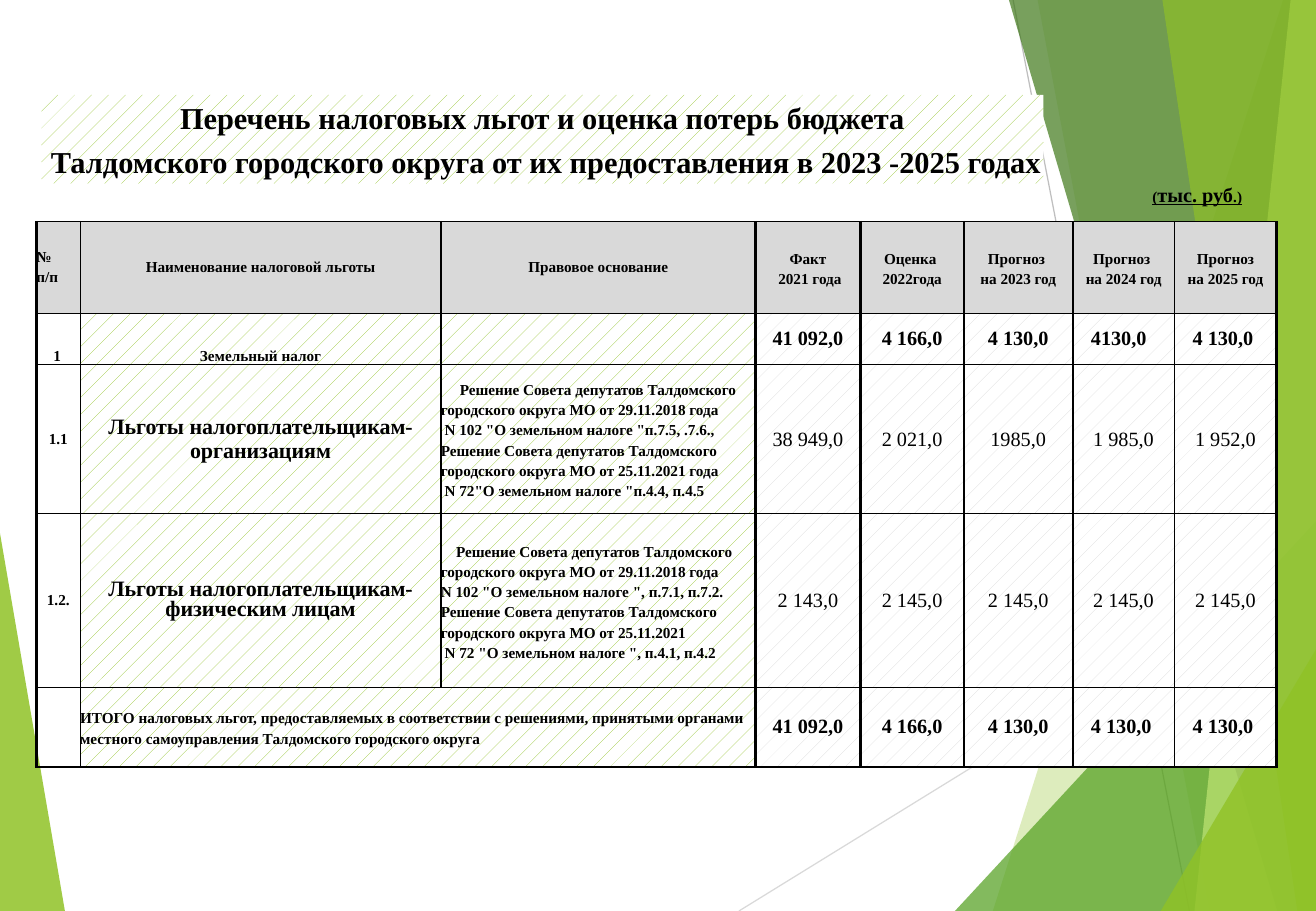
from dataclasses import dataclass

from lxml import etree
from pptx import Presentation
from pptx.dml.color import RGBColor
from pptx.enum.dml import MSO_PATTERN
from pptx.enum.shapes import MSO_CONNECTOR
from pptx.enum.text import MSO_ANCHOR, MSO_AUTO_SIZE, PP_ALIGN
from pptx.oxml.ns import qn
from pptx.util import Pt

LEFT, CENTER = PP_ALIGN.LEFT, PP_ALIGN.CENTER
MIDDLE, BOTTOM = MSO_ANCHOR.MIDDLE, MSO_ANCHOR.BOTTOM
NO_FIT = MSO_AUTO_SIZE.NONE
STRAIGHT = MSO_CONNECTOR.STRAIGHT
DOTTED = MSO_PATTERN.PERCENT_5


@dataclass(frozen=True)
class Theme:
    font: str = "Times New Roman"
    ink: str = "000000"
    paper: str = "FFFFFF"
    green: str = "90C226"
    leaf: str = "54A021"
    forest: str = "3F7819"
    lime: str = "C0E474"
    grey: str = "D9D9D9"
    mid_grey: str = "BFBFBF"
    title: float = 18
    name: float = 13
    number: float = 12
    small: float = 9
    thin: float = 0.75
    thick: float = 1.5


T = Theme()
W, H = 780, 540

TITLE = ["Перечень налоговых льгот и оценка потерь бюджета",
         " Талдомского городского округа от их предоставления в 2023 -2025 годах"]
UNIT = [("(", T.small), ("тыс. руб", T.number), (".)", T.small)]

RAYS = [((438, H), (W, 329), T.grey), ((600.5, 0), (705, H), T.mid_grey)]
FACETS = [
    ([(0, 316), (38.5, H), (0, H)], T.green, 85),
    ([(760.5, 0), (588.5, H), (W, H), (W, 0)], T.green, 30),
    ([(615, 0), (717, H), (W, H), (W, 0)], T.green, 20),
    ([(566, H), (W, 309), (W, H)], T.leaf, 72),
    ([(598, 0), (757, H), (W, H), (W, 0)], T.forest, 70),
    ([(765, 0), (708, H), (W, H), (W, 0)], T.lime, 70),
    ([(689, 0), (769, H), (W, H), (W, 0)], T.green, 65),
    ([(688, H), (W, 385), (W, H)], T.green, 80),
]

HEADER = ["№\nп/п", "Наименование налоговой льготы", "Правовое основание",
          "Факт\n 2021 года", "Оценка \n2022года", "Прогноз \nна 2023 год",
          "Прогноз \nна 2024 год", "Прогноз\nна 2025 год"]
ROWS = [
    HEADER,
    ["1", "Земельный налог", "", "41 092,0", "4 166,0", "4 130,0", "4130,0", "4 130,0"],
    ["1.1", "Льготы налогоплательщикам-организациям",
     "Решение Совета депутатов Талдомского городского округа МО от 29.11.2018 года\n"
     " N 102 \"О земельном налоге \"п.7.5, .7.6.,\n"
     "Решение Совета депутатов Талдомского городского округа МО от 25.11.2021 года\n"
     " N 72\"О земельном налоге \"п.4.4, п.4.5",
     "38 949,0", "2 021,0", "1985,0", "1 985,0", "1 952,0"],
    ["1.2.", "Льготы налогоплательщикам-физическим лицам",
     "Решение Совета депутатов Талдомского городского округа МО от 29.11.2018 года\n"
     "N 102 \"О земельном налоге \", п.7.1, п.7.2. "
     "Решение Совета депутатов Талдомского городского округа МО от 25.11.2021\n"
     " N 72 \"О земельном налоге \", п.4.1, п.4.2",
     "2 143,0", "2 145,0", "2 145,0", "2 145,0", "2 145,0"],
    ["", "ИТОГО налоговых льгот, предоставляемых в соответствии с решениями, принятыми "
         "органами местного самоуправления Талдомского городского округа",
     "", "41 092,0", "4 166,0", "4 130,0", "4 130,0", "4 130,0"],
]
COLS = [25.9, 213.8, 186.5, 62.3, 61.2, 64.6, 60.3, 60.5]
HEIGHTS = [54.7, 30.2, 88.6, 103, 46.8]
V_EDGES = [T.thick, T.thin] + [T.thick] * 5 + [T.thin, T.thick]
H_EDGES = [T.thin] * 5 + [T.thick]
DETAIL_ROWS, TOTAL_ROW = {2: 11.25, 3: 9}, 4


def rgb(value):
    return RGBColor.from_string(value)


def add_run(p, text, size, bold=True, underline=None):
    r = p.add_run()
    r.text = text
    f = r.font
    f.name, f.size, f.bold, f.underline = T.font, Pt(size), bold, underline
    f.color.rgb = rgb(T.ink)


def paragraphs(tf, lines):
    for i, line in enumerate(lines):
        yield (tf.add_paragraph() if i else tf.paragraphs[0]), line


def no_margins(box):
    box.margin_left = box.margin_top = box.margin_right = box.margin_bottom = 0


def dotted(fill, color):
    fill.patterned()
    fill.pattern = DOTTED
    fill.fore_color.rgb, fill.back_color.rgb = rgb(color), rgb(T.paper)


def add_backdrop(shapes):
    for start, end, color in RAYS:
        s = shapes.add_connector(STRAIGHT, *(Pt(v) for v in start + end))
        s.line.color.rgb, s.line.width = rgb(color), Pt(T.thin)
        etree.SubElement(s._element.spPr, qn("a:effectLst"))
    for points, color, opacity in FACETS:
        first, *rest = [(Pt(x), Pt(y)) for x, y in points]
        builder = shapes.build_freeform(*first)
        builder.add_line_segments(rest)
        sp = builder.convert_to_shape()
        sp.shadow.inherit = False
        sp.line.fill.background()
        sp.fill.solid()
        sp.fill.fore_color.rgb = rgb(color)
        clr = sp._element.spPr.find(qn("a:solidFill"))[0]
        etree.SubElement(clr, qn("a:alpha"), val=str(opacity * 1000))


def add_title(shapes):
    sp = shapes.title
    shapes._spTree.append(sp._element)
    sp.left, sp.top, sp.width, sp.height = Pt(24.5), Pt(56.2), Pt(594), Pt(52.6)
    dotted(sp.fill, T.green)
    tf = sp.text_frame
    no_margins(tf)
    tf.word_wrap, tf.auto_size, tf.vertical_anchor = True, NO_FIT, MIDDLE
    for p, line in paragraphs(tf, TITLE):
        p.alignment, p.space_after = CENTER, Pt(4.2)
        add_run(p, line, T.title)


def add_unit(shapes):
    tf = shapes.add_textbox(Pt(683), Pt(108), Pt(83.5), Pt(21.6)).text_frame
    no_margins(tf)
    tf.word_wrap = False
    for text, size in UNIT:
        add_run(tf.paragraphs[0], text, size, underline=True)


def set_borders(cell, row, col):
    tcPr = cell._tc.get_or_add_tcPr()
    sides = zip("LRTB", (V_EDGES[col], V_EDGES[col + 1], H_EDGES[row], H_EDGES[row + 1]))
    for side, width in sides:
        ln = etree.SubElement(tcPr, qn(f"a:ln{side}"), w=str(Pt(width)))
        fill = etree.SubElement(ln, qn("a:solidFill"))
        etree.SubElement(fill, qn("a:srgbClr"), val=T.ink)


def fill_cell(cell, row, col):
    if row == 0:
        cell.fill.solid()
        cell.fill.fore_color.rgb = rgb(T.grey)
    elif col == 0:
        cell.fill.background()
    else:
        dotted(cell.fill, T.green if col < 3 else T.grey)


def write_cell(cell, row, col, text):
    detail = row in DETAIL_ROWS
    number = row > 0 and col > 2
    legal = detail and col == 2
    total = row == TOTAL_ROW and col == 1
    size = T.number if number else T.name if detail and col == 1 else T.small
    margin = 10.8 if number and not detail and col > 5 else 10 if (row, col) == (1, 0) else 0
    flush = legal or total or margin or (row, col) == (0, 0)
    exact = legal or total or (row == 0 and col > 2) or (row, col) == (3, 1)
    cell.vertical_anchor = BOTTOM if row == 1 and col < 3 else MIDDLE
    for i, (p, line) in enumerate(paragraphs(cell.text_frame, text.split("\n"))):
        p.alignment = LEFT if flush else CENTER
        if exact:
            p.line_spacing = Pt(12)
        if (row, col, i) == (0, 0, 0):
            p.space_after = Pt(2.1)
        indent = DETAIL_ROWS[row] if legal and i == 0 else 0
        pPr = p._p.get_or_add_pPr()
        pPr.set("marL", str(Pt(margin)))
        pPr.set("indent", str(Pt(indent)))
        add_run(p, line, size, bold=not (detail and number))


def add_relief_table(shapes):
    frame = shapes.add_table(len(ROWS), len(COLS), Pt(21.6), Pt(131.2),
                             Pt(sum(COLS)), Pt(sum(HEIGHTS)))
    table = frame.table
    table.first_row = table.horz_banding = False
    for column, width in zip(table.columns, COLS):
        column.width = Pt(width)
    for line, height in zip(table.rows, HEIGHTS):
        line.height = Pt(height)
    table.cell(TOTAL_ROW, 1).merge(table.cell(TOTAL_ROW, 2))
    for row, texts in enumerate(ROWS):
        for col, text in enumerate(texts):
            cell = table.cell(row, col)
            no_margins(cell)
            set_borders(cell, row, col)
            fill_cell(cell, row, col)
            if text:
                write_cell(cell, row, col, text)


def main():
    """Build the tax relief slide and save it."""
    prs = Presentation()
    prs.slide_width, prs.slide_height = Pt(W), Pt(H)
    shapes = prs.slides.add_slide(prs.slide_layouts[5]).shapes
    add_backdrop(shapes)
    add_title(shapes)
    add_unit(shapes)
    add_relief_table(shapes)
    prs.save("out.pptx")


if __name__ == "__main__":
    main()
